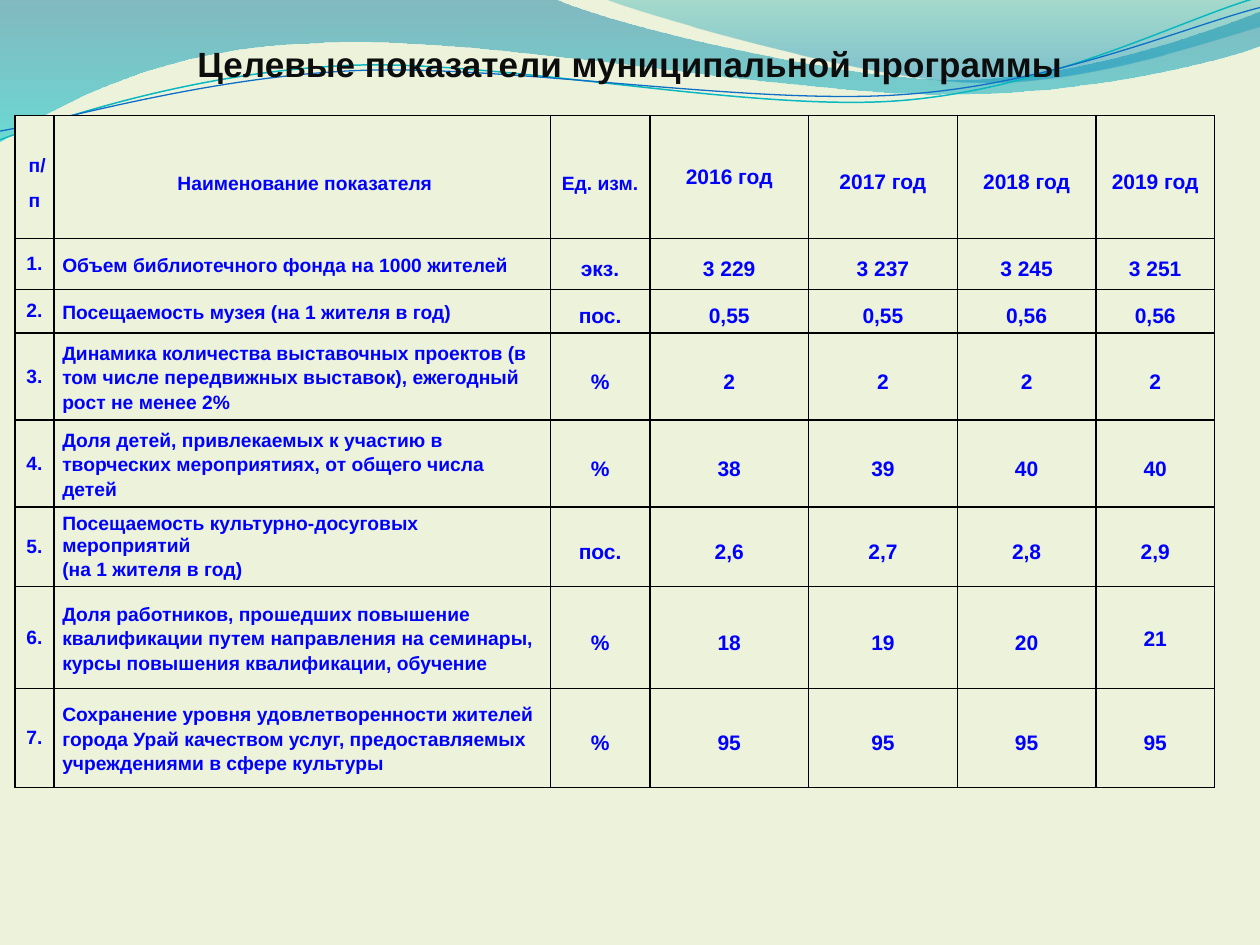
from dataclasses import dataclass

from lxml.etree import SubElement
from pptx import Presentation
from pptx.dml.color import RGBColor
from pptx.enum.text import MSO_ANCHOR, MSO_AUTO_SIZE, PP_ALIGN
from pptx.oxml import parse_xml
from pptx.oxml.ns import nsdecls, qn
from pptx.util import Pt


@dataclass(frozen=True)
class Theme:
    font: str = "Arial"
    background: RGBColor = RGBColor.from_string("EDF3DB")
    title: RGBColor = RGBColor.from_string("0D0D0D")
    table_text: RGBColor = RGBColor.from_string("0000FF")
    border: str = "000000"
    title_size: int = 20
    label_size: int = 11
    value_size: int = 12
    exact_spacing: Pt = Pt(19.6)
    loose_spacing: float = 1.15


THEME = Theme()

# Each segment holds one point for a straight line or three for a Bezier curve.
# Gradient stops are (position, colour, opacity in percent).
WAVES = [
    {"start": (0, 0),
     "segments": [
         [(316.8, -0.7)],
         [(342.7, 12.2), (478.1, 45.4), (545.8, 45.4)],
         [(614.2, 45.4), (689.8, 18.7), (720, 6.5)],
         [(720.7, 25.9)],
         [(707.8, 31.7), (626.4, 54.7), (537.1, 54)],
         [(447.8, 54), (275, 20.2), (185, 24.5)],
         [(92.9, 25.9), (33.1, 59.8), (-0.7, 81.4)]],
     "stops": [(0, "0074A1", 45), (1, "00C6CF", 55)]},
    {"start": (344.9, -0.7),
     "segments": [
         [(366.5, 7.9), (491, 44.6), (553.7, 46.8)],
         [(616.3, 49.7), (691.9, 23), (720, 15.1)],
         [(720, 0)]],
     "stops": [(0, "00A1A9", 30), (0.8, "008BBF", 45)]},
]
WAVE_LINES = [
    {"start": (0, 79.9),
     "segments": [
         [(34.6, 67), (113.8, 41), (199.4, 37.4)],
         [(284.4, 33.8), (427, 64.1), (513.4, 57.6)],
         [(599.8, 51.1), (675.4, 10.8), (718.6, -1.4)]],
     "color": "0AB8BF", "width": 0.85},
    {"start": (0, 74.9),
     "segments": [
         [(33.8, 69.1), (118.1, 43.9), (203.8, 40.3)],
         [(290.2, 36.7), (429.8, 60.5), (516.2, 54)],
         [(601.9, 48.2), (677.5, 15.1), (720, 4.3)]],
     "color": "0F6FC6", "width": 0.75},
]

COLUMN_WIDTHS = [22.5, 283.5, 56.9, 90.7, 85, 79.2, 67.8]
ROW_HEIGHTS = [70.4, 29, 25.1, 49.7, 49.7, 45.5, 58.1, 56.7]
NO_BREAK_SPACE = chr(160)
HEADER = [NO_BREAK_SPACE + "п/п", NO_BREAK_SPACE + "Наименование показателя", "Ед. изм.",
          "2016 год", "2017 год", "2018 год", "2019 год"]
INDICATORS = [
    ("Объем библиотечного фонда на 1000 жителей",
     "экз.", "3 229", "3 237", "3 245", "3 251"),
    ("Посещаемость музея (на 1 жителя в год)",
     "пос.", "0,55", "0,55", "0,56", "0,56"),
    ("Динамика количества выставочных проектов (в том числе передвижных "
     "выставок), ежегодный рост не менее 2%", "%", "2", "2", "2", "2"),
    ("Доля детей, привлекаемых к участию в творческих мероприятиях, "
     "от общего числа детей", "%", "38", "39", "40", "40"),
    ("Посещаемость культурно-досуговых мероприятий\n(на 1 жителя в год)",
     "пос.", "2,6", "2,7", "2,8", "2,9"),
    ("Доля работников, прошедших повышение квалификации путем направления "
     "на семинары, курсы повышения квалификации, обучение",
     "%", "18", "19", "20", "21"),
    ("Сохранение уровня удовлетворенности жителей города Урай качеством "
     "услуг, предоставляемых учреждениями в сфере культуры",
     "%", "95", "95", "95", "95"),
]
NUMBER, NAME, UNIT, FIRST_YEAR = range(4)


def set_attributes(target, values):
    for name, value in values.items():
        setattr(target, name, value)


def add_text(paragraph, text, size, color):
    run = paragraph.add_run()
    run.text = text
    set_attributes(run.font, {"name": THEME.font, "size": Pt(size), "bold": True})
    run.font.color.rgb = color


def bend_segments(shape, segments):
    """Join the three line steps of each curved segment into one Bezier step."""
    steps = iter(list(shape.element.spPr.iter(qn("a:lnTo"))))
    for segment in segments:
        group = [next(steps) for _ in segment]
        if len(group) == 3:
            curve = parse_xml(f'<a:cubicBezTo {nsdecls("a")}/>')
            group[0].addprevious(curve)
            for step in group:
                curve.append(step[0])
                step.getparent().remove(step)


def add_outline(slide, start, segments, close):
    builder = slide.shapes.build_freeform(Pt(start[0]), Pt(start[1]))
    points = [(Pt(x), Pt(y)) for segment in segments for x, y in segment]
    builder.add_line_segments(points, close=close)
    shape = builder.convert_to_shape()
    shape.shadow.inherit = False
    bend_segments(shape, segments)
    return shape


def add_wave(slide, start, segments, stops):
    shape = add_outline(slide, start, segments, close=True)
    shape.line.fill.background()
    shape.fill.gradient()
    shape.fill.gradient_angle = 270
    for stop, (position, color, _) in zip(shape.fill.gradient_stops, stops):
        stop.position = position
        stop.color.rgb = RGBColor.from_string(color)
    for element, (_, _, opacity) in zip(shape.element.spPr.iter(qn("a:srgbClr")), stops):
        SubElement(element, qn("a:alpha")).set("val", str(opacity * 1000))


def add_wave_line(slide, start, segments, color, width):
    shape = add_outline(slide, start, segments, close=False)
    shape.fill.background()
    shape.line.color.rgb = RGBColor.from_string(color)
    shape.line.width = Pt(width)


def set_borders(cell):
    properties = cell._tc.get_or_add_tcPr()
    for index, side in enumerate(("lnL", "lnR", "lnT", "lnB")):
        properties.insert(index, parse_xml(
            f'<a:{side} {nsdecls("a")} w="{Pt(1)}"><a:solidFill>'
            f'<a:srgbClr val="{THEME.border}"/></a:solidFill></a:{side}>'))


def line_spacing(row, column, text):
    if row == 0:
        return None if column == FIRST_YEAR else THEME.exact_spacing
    if column == NUMBER:
        return None
    return THEME.loose_spacing if column == NAME or text == "21" else THEME.exact_spacing


def fill_cell(cell, row, column, text):
    margin = Pt(0 if column == UNIT else 4.6)
    set_attributes(cell, {"margin_left": margin, "margin_right": margin, "margin_top": 0,
                          "margin_bottom": 0, "vertical_anchor": MSO_ANCHOR.MIDDLE})
    cell.fill.solid()
    cell.fill.fore_color.rgb = THEME.background
    set_borders(cell)
    is_label = column <= NAME or (row == 0 and column == UNIT)
    size = THEME.label_size if is_label else THEME.value_size
    left_aligned = row > 0 and column == NAME
    frame = cell.text_frame
    for index, line in enumerate(text.split("\n")):
        paragraph = frame.add_paragraph() if index else frame.paragraphs[0]
        paragraph.alignment = PP_ALIGN.LEFT if left_aligned else PP_ALIGN.CENTER
        add_text(paragraph, line, size, THEME.table_text)
    paragraph.line_spacing = line_spacing(row, column, text)


def add_indicator_table(slide):
    rows = [HEADER] + [(f"{number}.", *values) for number, values in enumerate(INDICATORS, 1)]
    table = slide.shapes.add_table(len(rows), len(HEADER), Pt(8.5), Pt(65.9),
                                   Pt(sum(COLUMN_WIDTHS)), Pt(sum(ROW_HEIGHTS))).table
    set_attributes(table, {"first_row": False, "horz_banding": False})
    for column, width in zip(table.columns, COLUMN_WIDTHS):
        column.width = Pt(width)
    for row, height in zip(table.rows, ROW_HEIGHTS):
        row.height = Pt(height)
    for row, values in enumerate(rows):
        for column, text in enumerate(values):
            fill_cell(table.cell(row, column), row, column, text)


def format_title(slide, text):
    """Place the title in front of the waves."""
    title = slide.shapes.title
    set_attributes(title, {"left": 0, "top": Pt(20.6), "width": Pt(720), "height": Pt(31.5)})
    set_attributes(title.text_frame, {"word_wrap": True, "vertical_anchor": MSO_ANCHOR.TOP,
                                      "auto_size": MSO_AUTO_SIZE.SHAPE_TO_FIT_TEXT})
    paragraph = title.text_frame.paragraphs[0]
    paragraph.alignment = PP_ALIGN.CENTER
    add_text(paragraph, text, THEME.title_size, THEME.title)
    title.element.getparent().append(title.element)


def main():
    presentation = Presentation()
    set_attributes(presentation, {"slide_width": Pt(720), "slide_height": Pt(540)})
    slide = presentation.slides.add_slide(presentation.slide_layouts[5])
    slide.background.fill.solid()
    slide.background.fill.fore_color.rgb = THEME.background
    for wave in WAVES:
        add_wave(slide, **wave)
    for wave_line in WAVE_LINES:
        add_wave_line(slide, **wave_line)
    add_indicator_table(slide)
    format_title(slide, "Целевые показатели муниципальной программы")
    presentation.save("out.pptx")


if __name__ == "__main__":
    main()
